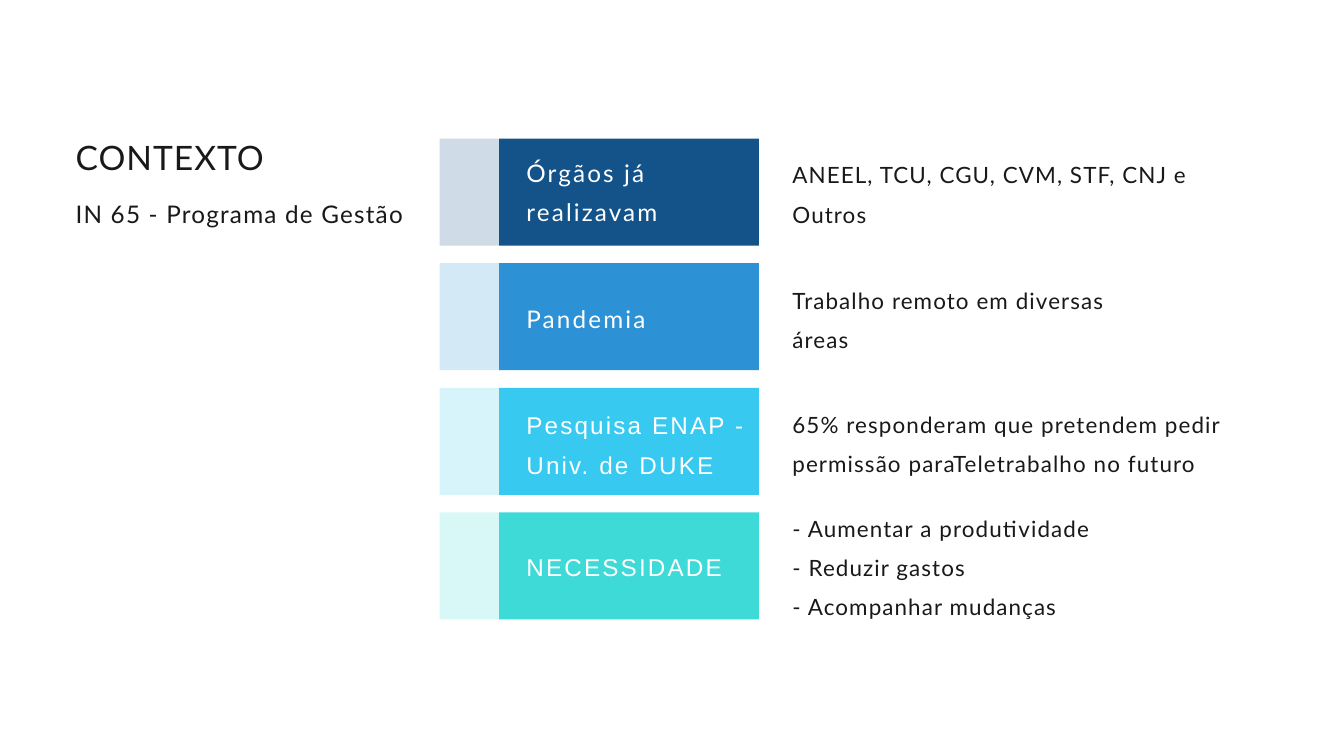
from lxml import etree
from pptx import Presentation, util as u
from pptx.dml.color import RGBColor
from pptx.enum import shapes, text
from pptx.oxml.ns import qn

PX = 9525
COLORS = {
    "ink": "191919",
    "white": "FFFFFF",
    "navy": "13538A",
    "blue": "2C92D5",
    "sky": "37C9EF",
    "teal": "3EDAD8",
}
ROW_HEIGHT, ROW_PITCH = 153, 178
TAB_WIDTH, BLOCK_WIDTH = 85, 371

ROWS = [
    ("navy", "Órgãos já realizavam", "Lato", (13, 245),
     "ANEEL, TCU, CGU, CVM, STF, CNJ e Outros", (15, 627)),
    ("blue", "Pandemia", "Lato", (44, 245),
     "Trabalho remoto em diversas áreas", (16, 517)),
    ("sky", "Pesquisa ENAP - Univ. de DUKE", "Arial", (18, 315),
     "65% responderam que pretendem pedir permissão paraTeletrabalho no futuro", (16, 627)),
    ("teal", "NECESSIDADE", "Arial", (43, 287),
     "- Aumentar a produtividade\n- Reduzir gastos\n- Acompanhar mudanças", (-14, 627)),
]


def place(shape, left, top, width, height):
    shape.left, shape.top = left * PX, top * PX
    shape.width, shape.height = width * PX, height * PX


def write(holder, wording, size, leading, tracking, color="ink", font="Lato"):
    frame = holder.text_frame
    frame.text = wording
    frame.word_wrap = True
    frame.auto_size = text.MSO_AUTO_SIZE.NONE
    frame.vertical_anchor = text.MSO_ANCHOR.TOP
    frame.margin_left = frame.margin_top = frame.margin_right = frame.margin_bottom = 0
    for paragraph in frame.paragraphs:
        paragraph.alignment = text.PP_ALIGN.LEFT
        paragraph.line_spacing = u.Pt(leading)
        paragraph.space_before = paragraph.space_after = u.Pt(0)
        if holder.is_placeholder:
            properties = paragraph._p.get_or_add_pPr()
            properties.set("marL", "0")
            properties.set("indent", "0")
            etree.SubElement(properties, qn("a:buNone"))
        for run in paragraph.runs:
            run.font.size = u.Pt(size)
            run.font.name = font
            run.font.color.rgb = RGBColor.from_string(COLORS[color])
            run._r.get_or_add_rPr().set("spc", str(round(tracking * 100)))


def add_block(slide, box, color, opacity=100):
    block = slide.shapes.add_shape(shapes.MSO_SHAPE.RECTANGLE, *(n * PX for n in box))
    block.shadow.inherit = False
    block.line.fill.background()
    block.fill.solid()
    block.fill.fore_color.rgb = RGBColor.from_string(COLORS[color])
    if opacity < 100:
        tint = block._element.spPr.find(qn("a:solidFill"))[0]
        etree.SubElement(tint, qn("a:alpha"), val=str(opacity * 1000))


def add_heading(title, subtitle, left, top, width):
    place(title, left, top, width, 58)
    write(title, "CONTEXTO", 36, 43.2, 1.1)
    place(subtitle, left, top + 70, width, 52)
    write(subtitle, "IN 65 - Programa de Gestão", 26, 45.5, 1.3)


def add_row(slide, left, top, row, detail):
    color, topic, font, (topic_drop, topic_width), wording, (drop, width) = row
    block_left = left + TAB_WIDTH
    add_block(slide, (left, top, TAB_WIDTH, ROW_HEIGHT), color, opacity=20)
    add_block(slide, (block_left, top, BLOCK_WIDTH, ROW_HEIGHT), color)
    label = slide.shapes.add_textbox(0, 0, 0, 0)
    place(label, block_left + 39, top + topic_drop, topic_width, 109)
    write(label, topic, 26, 42.1, 2.3, "white", font)
    detail = detail or slide.shapes.add_textbox(0, 0, 0, 0)
    place(detail, left + 504, top + drop, width, 56 * (wording.count("\n") or 2))
    write(detail, wording, 24, 42, 1.2)


def main():
    deck = Presentation()
    deck.slide_width, deck.slide_height = 1920 * PX, 1080 * PX
    slide = deck.slides.add_slide(deck.slide_layouts.get_by_name("Two Content"))
    title, subtitle, needs = slide.placeholders
    add_heading(title, subtitle, 108, 195, 569)
    for index, row in enumerate(ROWS):
        detail = needs if "\n" in row[4] else None
        add_row(slide, 628, 198 + index * ROW_PITCH, row, detail)
    deck.save("out.pptx")


if __name__ == "__main__":
    main()
